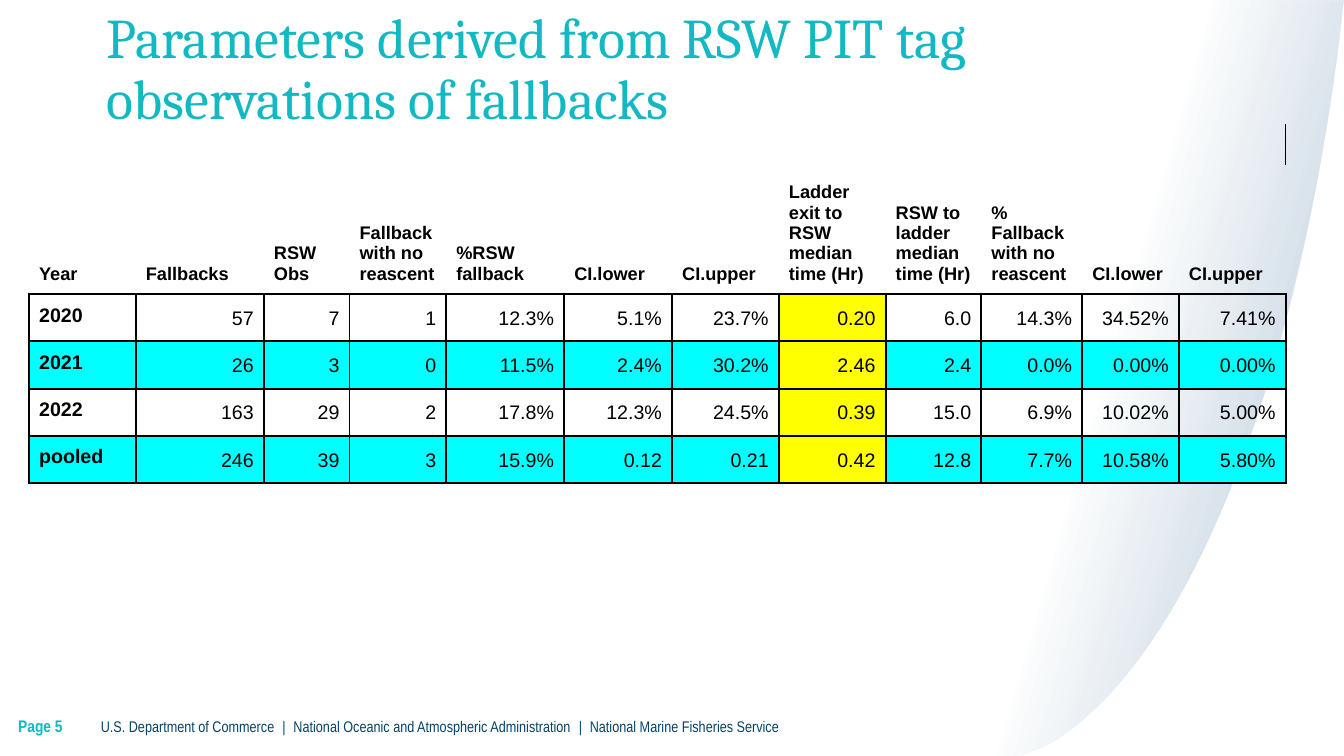
import pptx
import pptx.util
import pptx.oxml
import pptx.oxml.ns
import pptx.dml.color
import pptx.enum.text
from lxml import etree

Pt = pptx.util.Pt
ANCHOR = pptx.enum.text.MSO_ANCHOR
ALIGN = pptx.enum.text.PP_ALIGN

# Content
TITLE = "Parameters derived from RSW PIT tag observations of fallbacks"
PAGE = "Page 5"
AGENCIES = ["U.S. Department of Commerce",
            "National Oceanic and Atmospheric Administration",
            "National Marine Fisheries Service"]
EN_SPACE = chr(0x2002)
HEADINGS = ["Year", "Fallbacks", "RSW Obs", "Fallback with no reascent",
            "%RSW fallback", "CI.lower", "CI.upper",
            "Ladder exit to RSW median time (Hr)",
            "RSW to ladder median time (Hr)", "%\nFallback with no reascent",
            "CI.lower", "CI.upper"]
YEARS = [
    ["2020", "57", "7", "1", "12.3%", "5.1%", "23.7%", "0.20", "6.0",
     "14.3%", "34.52%", "7.41%"],
    ["2021", "26", "3", "0", "11.5%", "2.4%", "30.2%", "2.46", "2.4",
     "0.0%", "0.00%", "0.00%"],
    ["2022", "163", "29", "2", "17.8%", "12.3%", "24.5%", "0.39", "15.0",
     "6.9%", "10.02%", "5.00%"],
    ["pooled", "246", "39", "3", "15.9%", "0.12", "0.21", "0.42", "12.8",
     "7.7%", "10.58%", "5.80%"],
]
WIDTHS = [76.3, 91.45, 61.2, 69.1, 84.25, 77.05, 76.3, 76.3, 68.4, 72,
          69.1, 76.3]
# Row heights are minimums: rows grow to fit their text
SPACER_HEIGHT, HEADING_HEIGHT, YEAR_HEIGHT, TABLE_HEIGHT = 0, 82.8, 28.9, 236
LADDER_COLUMN = HEADINGS.index("Ladder exit to RSW median time (Hr)")
TEAL, NAVY, BLACK, WHITE = "13B9C2", "05436A", "000000", "FFFFFF"
YELLOW, CYAN, SWOOSH = "FFFF00", "00FFFF", "07477D"
SLIDE_W, SLIDE_H = 960, 540


def colour(hex_code):
    return pptx.dml.color.RGBColor.from_string(hex_code)


def write(frame, text, size, font="Arial", ink=BLACK, bold=False,
          align=ALIGN.LEFT, spacing=1.0):
    frame.word_wrap = True
    frame.text = text
    for paragraph in frame.paragraphs:
        paragraph.alignment = align
        paragraph.line_spacing = spacing
        for run in paragraph.runs:
            run.font.size, run.font.name = Pt(size), font
            run.font.bold, run.font.color.rgb = bold, colour(ink)


def text_box(left, top, width, height, text, anchor, **style):
    frame = slide.shapes.add_textbox(
        Pt(left), Pt(top), Pt(width), Pt(height)).text_frame
    frame.margin_left = frame.margin_right = 0
    frame.margin_top = frame.margin_bottom = 0
    frame.vertical_anchor = anchor
    write(frame, text, **style)


def outline(points):
    builder = slide.shapes.build_freeform(
        Pt(points[0][0]), Pt(points[0][1]), scale=1.0)
    builder.add_line_segments([(Pt(x), Pt(y)) for x, y in points[1:]])
    shape = builder.convert_to_shape()
    shape.shadow.inherit = False
    shape.line.fill.background()
    return shape


def bezier(start, first, second, end, steps=40):
    for t in (step / steps for step in range(steps + 1)):
        s = 1 - t
        yield tuple(s**3 * a + 3 * s * s * t * b + 3 * s * t * t * c + t**3 * d
                    for a, b, c, d in zip(start, first, second, end))


def border(cell, sides, width):
    properties = cell._tc.get_or_add_tcPr()
    for side in "LRTB":
        line = etree.SubElement(properties, pptx.oxml.ns.qn(f"a:ln{side}"))
        line.set("w", str(int(Pt(width))))
        if side in sides:
            fill = etree.SubElement(line, pptx.oxml.ns.qn("a:solidFill"))
            etree.SubElement(fill, pptx.oxml.ns.qn("a:srgbClr"), val=BLACK)
        else:
            etree.SubElement(line, pptx.oxml.ns.qn("a:noFill"))


deck = pptx.Presentation()
deck.slide_width, deck.slide_height = Pt(SLIDE_W), Pt(SLIDE_H)
slide = deck.slides.add_slide(deck.slide_layouts[6])

# Curved background: a fading band trimmed by a white edge
band = outline([(953.5, 540.5), (683.5, 540), (843, 0), (960, 0.5)])
stops = "".join(
    f'<a:gs pos="{position * 1000}"><a:srgbClr val="{SWOOSH}">'
    f'<a:alpha val="{alpha * 1000}"/></a:srgbClr></a:gs>'
    for position, alpha in [(0, 0), (42, 0), (100, 33)])
gradient = pptx.oxml.parse_xml(
    f'<a:gradFill {pptx.oxml.ns.nsdecls("a")} rotWithShape="1">'
    f'<a:gsLst>{stops}</a:gsLst><a:lin ang="{16 * 60000}" scaled="0"/>'
    '</a:gradFill>')
band._element.spPr.find(pptx.oxml.ns.qn("a:custGeom")).addnext(gradient)

curve = bezier((747.5, 533), (844.5, 478), (923.75, 285), (956.25, 33))
edge = outline([(SLIDE_W, 0.5), (SLIDE_W, SLIDE_H), (729.5, SLIDE_H), *curve])
edge.fill.solid()
edge.fill.fore_color.rgb = colour(WHITE)

# Footer and title
text_box(72, 501, 703.5, 35.5, f"{EN_SPACE}|{EN_SPACE}".join(AGENCIES),
         ANCHOR.MIDDLE, size=11, font="Arial Narrow", ink=NAVY)
text_box(13, 496.5, 59, 44, PAGE, ANCHOR.MIDDLE, size=12,
         font="Arial Narrow", ink=TEAL, bold=True)
text_box(76.2, 46.3, 733, 47.5, TITLE, ANCHOR.BOTTOM, size=40,
         font="Cambria", ink=TEAL, spacing=0.9)

# Table: merged spacer row, headings, one row per year
heights = [SPACER_HEIGHT, HEADING_HEIGHT] + [YEAR_HEIGHT] * len(YEARS)
table_frame = slide.shapes.add_table(
    len(heights), len(WIDTHS), Pt(20.75), Pt(88.75),
    Pt(sum(WIDTHS)), Pt(TABLE_HEIGHT))
table = table_frame.table
table.first_row = table.horz_banding = False
table._tbl.tblPr.find(pptx.oxml.ns.qn("a:tableStyleId")).text = (
    "{2D5ABB26-0587-4C30-8999-92F81FD0307C}")
for column, width in zip(table.columns, WIDTHS):
    column.width = Pt(width)
for row, height in zip(table.rows, heights):
    row.height = Pt(height)
table_frame.height = Pt(TABLE_HEIGHT)

spacer = table.cell(0, 0)
spacer.merge(table.cell(0, len(WIDTHS) - 1))
border(spacer, "R", 1)
spacer.fill.background()

for r, values in enumerate([HEADINGS] + YEARS):
    for c, value in enumerate(values):
        cell = table.cell(r + 1, c)
        cell.margin_left = cell.margin_right = Pt(7.2)
        cell.margin_top = cell.margin_bottom = Pt(7.2)
        border(cell, "LRTB" if r else "B", 1.5)
        if r and (c == LADDER_COLUMN or r % 2 == 0):
            cell.fill.solid()
            cell.fill.fore_color.rgb = colour(
                YELLOW if c == LADDER_COLUMN else CYAN)
        else:
            cell.fill.background()
        if r == 0:
            cell.vertical_anchor = ANCHOR.BOTTOM
            write(cell.text_frame, value, size=13, bold=True)
        elif c == 0:
            write(cell.text_frame, value, size=14, bold=True)
        else:
            write(cell.text_frame, value, size=14, align=ALIGN.RIGHT,
                  spacing=1.15)

deck.save("out.pptx")
